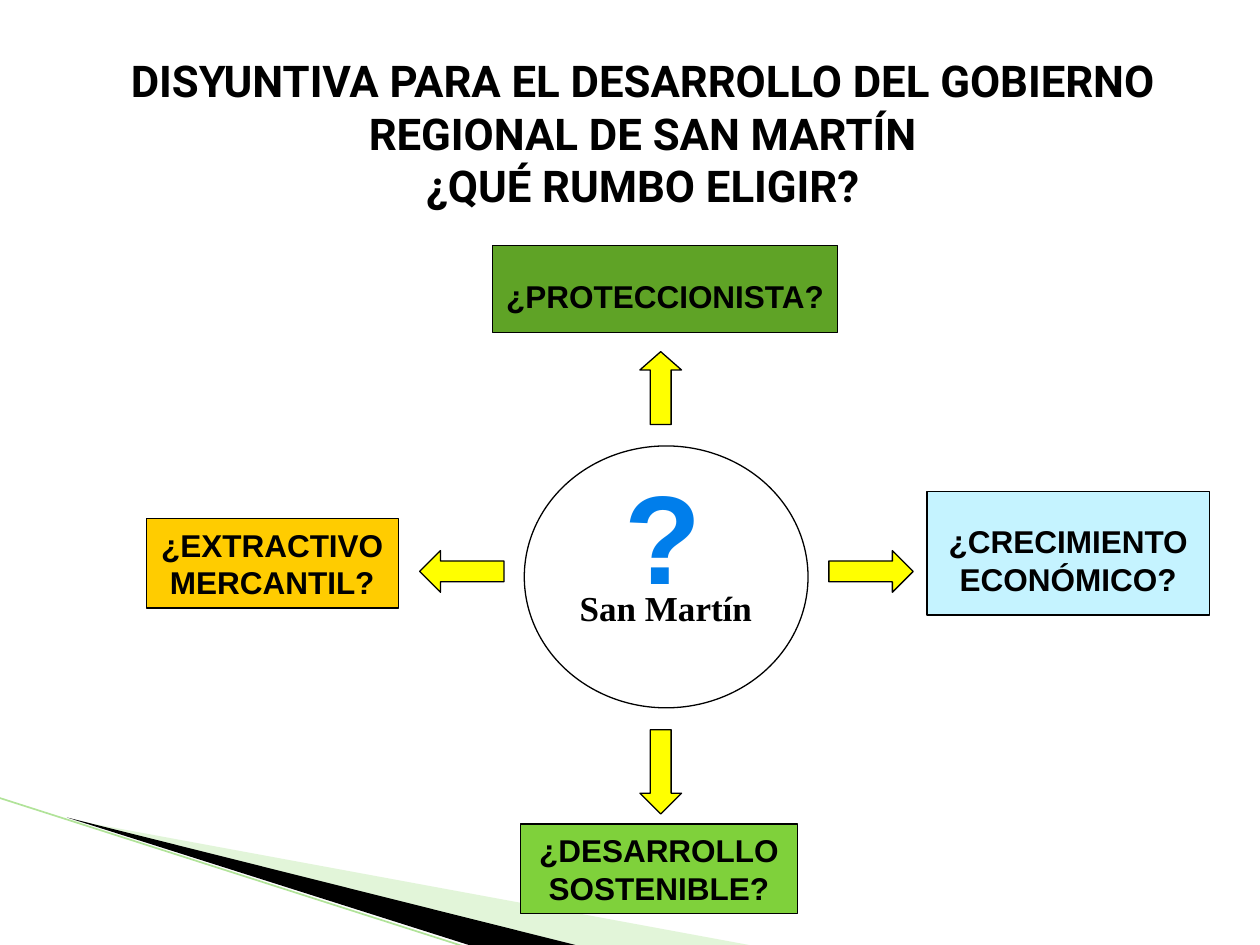
from pptx import Presentation
from pptx.dml.color import RGBColor
from pptx.enum.shapes import MSO_CONNECTOR, MSO_SHAPE
from pptx.enum.text import MSO_ANCHOR, PP_ALIGN
from pptx.oxml.ns import qn
from pptx.util import Cm, Pt
from lxml import etree


def rgb(value):
    return RGBColor.from_string(value)


def set_text(sp, text, font, size, color="000000", align=PP_ALIGN.CENTER, top=0.13):
    tf = sp.text_frame
    tf.text = text
    tf.word_wrap = True
    tf.vertical_anchor = MSO_ANCHOR.MIDDLE
    tf.margin_left = tf.margin_right = Cm(0.25)
    tf.margin_top, tf.margin_bottom = Cm(top), Cm(0.13)
    p = tf.paragraphs[0]
    p.alignment = align
    for r in p.runs:
        r.font.name = font
        r.font.size = Pt(size)
        r.font.bold = True
        r.font.color.rgb = rgb(color)


prs = Presentation()
prs.slide_width, prs.slide_height = Cm(25.4), Cm(19.05)
s = prs.slides.add_slide(prs.slide_layouts[5])

# Corner wedges: points in cm, fill, opacity in percent
wedges = [
    ([(1.4, 16.52), (15.1, 19.05), (11.58, 19.05)], "B8E7A1", 40),
    ([(1.35, 16.48), (11.6, 19.05), (9.45, 19.05)], "000000", 100),
]
for points, fill, opacity in wedges:
    corners = [(Cm(x), Cm(y)) for x, y in points]
    builder = s.shapes.build_freeform(*corners[0])
    builder.add_line_segments(corners[1:], close=True)
    sp = builder.convert_to_shape()
    sp.shadow.inherit = False
    sp.fill.solid()
    sp.fill.fore_color.rgb = rgb(fill)
    sp.line.fill.background()
    if opacity < 100:
        clr = sp.fill._xPr.find(qn("a:solidFill"))[0]
        etree.SubElement(clr, qn("a:alpha")).set("val", str(opacity * 1000))

# Corner edge line
edge = s.shapes.add_connector(MSO_CONNECTOR.STRAIGHT, Cm(-0.03), Cm(16.08), Cm(9.42), Cm(19.1))
edge.line.color.rgb = rgb("B1E399")
edge.line.width = Pt(0.95)
etree.SubElement(edge._element.spPr, qn("a:effectLst"))

# Title
title = s.shapes.title
title.left, title.top, title.width, title.height = Cm(0.51), Cm(0.84), Cm(24.89), Cm(3.68)
set_text(title, "DISYUNTIVA PARA EL DESARROLLO DEL GOBIERNO REGIONAL DE SAN MARTÍN\v¿QUÉ RUMBO ELIGIR?",
         "Roboto", 25)

# Centre circle, arrows and option boxes: preset, place in cm, fill, text, top inset
shapes = [
    (MSO_SHAPE.OVAL, (10.57, 8.99, 5.72, 5.28), None, None, 0),
    (MSO_SHAPE.UP_ARROW, (12.9, 7.09, 0.84, 1.47), "FFFF00", None, 0),
    (MSO_SHAPE.RIGHT_ARROW, (16.71, 11.1, 1.7, 0.84), "FFFF00", None, 0),
    (MSO_SHAPE.DOWN_ARROW, (12.9, 14.71, 0.84, 1.7), "FFFF00", None, 0),
    (MSO_SHAPE.LEFT_ARROW, (8.46, 11.1, 1.7, 0.84), "FFFF00", None, 0),
    (MSO_SHAPE.RECTANGLE, (9.93, 4.95, 6.96, 1.75), "5FA326", "¿PROTECCIONISTA?", 0.4),
    (MSO_SHAPE.RECTANGLE, (18.69, 9.91, 5.69, 2.49), "C5F3FF", "¿CRECIMIENTO ECONÓMICO?", 0.4),
    (MSO_SHAPE.RECTANGLE, (10.49, 16.61, 5.59, 1.8), "7FD13B", "¿DESARROLLO SOSTENIBLE?", 0.13),
    (MSO_SHAPE.RECTANGLE, (2.95, 10.46, 5.08, 1.8), "FFCC00", "¿EXTRACTIVO MERCANTIL?", 0.13),
]
for preset, place, fill, text, top in shapes:
    sp = s.shapes.add_shape(preset, *[Cm(v) for v in place])
    sp.shadow.inherit = False
    sp.line.color.rgb = rgb("000000")
    sp.line.width = Pt(0.75)
    if fill:
        sp.fill.solid()
        sp.fill.fore_color.rgb = rgb(fill)
    else:
        sp.fill.background()
    if preset == MSO_SHAPE.UP_ARROW:
        sp.adjustments[1] = 0.44
    if text:
        set_text(sp, text, "Arial", 18, top=top)

# Labels inside the circle
mark = s.shapes.add_textbox(Cm(12.34), Cm(9.02), Cm(2.34), Cm(3.33))
set_text(mark, "?", "Arial", 72, "007EEB", PP_ALIGN.LEFT, 0.3)
region = s.shapes.add_textbox(Cm(11.1), Cm(11.71), Cm(4.65), Cm(1.09))
set_text(region, "San Martín", "Times New Roman", 20)

prs.save("out.pptx")
